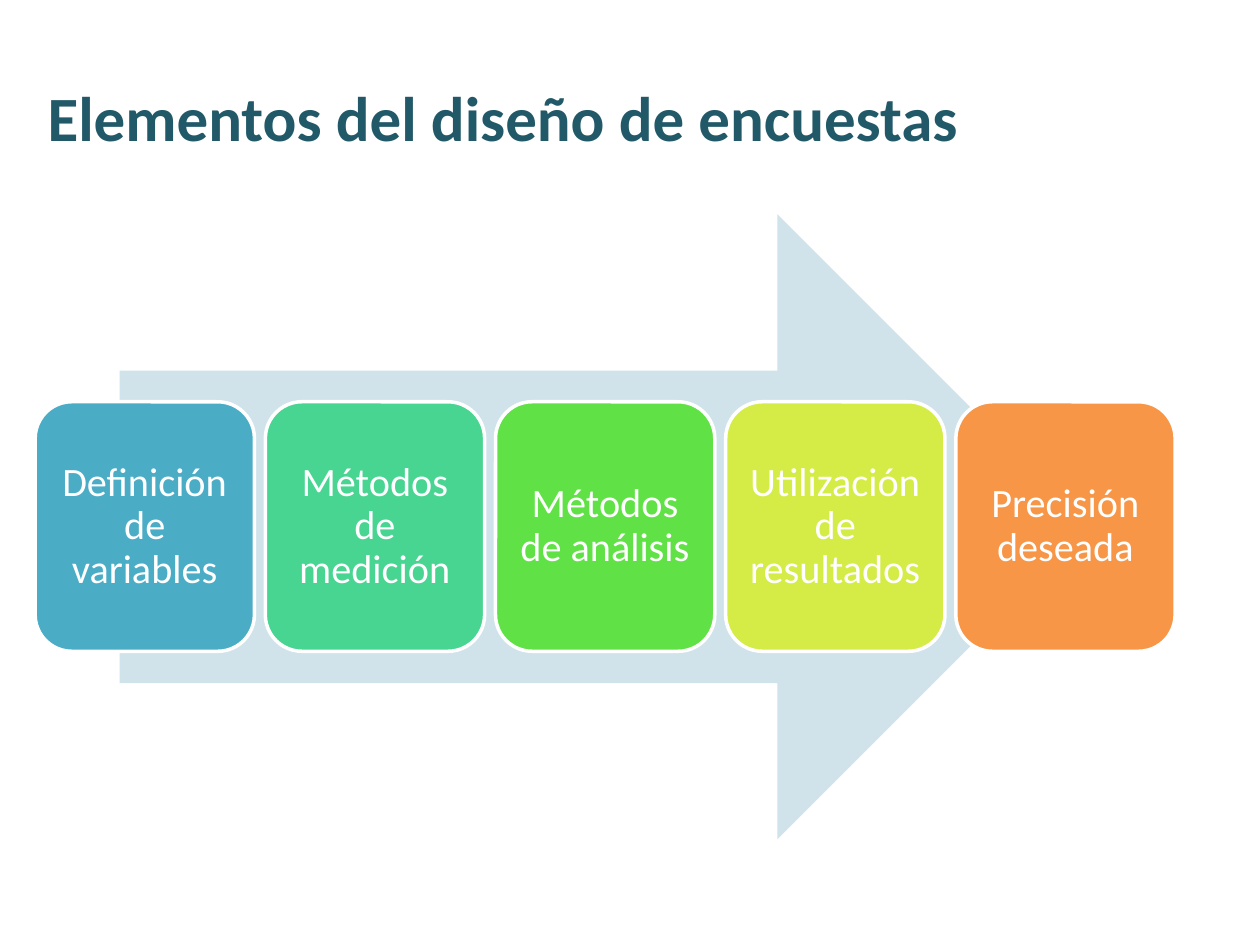
from pptx import Presentation
from pptx.dml.color import RGBColor as RGB
from pptx.enum.shapes import MSO_SHAPE as SHAPE
from pptx.enum.text import MSO_ANCHOR as ANCHOR, PP_ALIGN as ALIGN
from pptx.util import Cm, Pt

COLORS = {
    "title": "215968", "arrow": "D0E3EA", "white": "FFFFFF",
    "blue": "4BACC6", "teal": "48D491", "green": "60E146",
    "lime": "D5EC46", "orange": "F79646",
}
STEPS = [
    ("Definición de variables", "blue"),
    ("Métodos de medición", "teal"),
    ("Métodos de análisis", "green"),
    ("Utilización de resultados", "lime"),
    ("Precisión deseada", "orange"),
]
TITLE_FONT = {"name": "Calibri", "size": Pt(36), "bold": True}
STEP_FONT = {"name": "Calibri", "size": Pt(23), "bold": False}
STEP_FRAME = {side: Cm(0.25) for side in
              ("margin_left", "margin_right", "margin_top", "margin_bottom")}
STEP_LEFT, STEP_PITCH = 0.71, 4.64


def set_all(obj, values):
    for name, value in values.items():
        setattr(obj, name, value)


def write(sp, text, font, color, frame=None, para=None):
    tf = sp.text_frame
    set_all(tf, {"word_wrap": True, "vertical_anchor": ANCHOR.MIDDLE, **(frame or {})})
    p = tf.paragraphs[0]
    set_all(p, para or {})
    r = p.add_run()
    r.text = text
    set_all(r.font, font)
    r.font.color.rgb = RGB.from_string(COLORS[color])


def add_title(s, text):
    sp = s.shapes.add_textbox(Cm(0.71), Cm(0.76), Cm(22.81), Cm(3.18))
    write(sp, text, TITLE_FONT, "title")


def add_filled(s, kind, box, color):
    sp = s.shapes.add_shape(kind, *(Cm(v) for v in box))
    sp.shadow.inherit = False
    sp.fill.solid()
    sp.fill.fore_color.rgb = RGB.from_string(COLORS[color])
    sp.line.fill.background()
    return sp


def add_step(s, index, text, color):
    box = (STEP_LEFT + index * STEP_PITCH, 8.1, 4.42, 5.03)
    sp = add_filled(s, SHAPE.ROUNDED_RECTANGLE, box, color)
    sp.line.color.rgb = RGB.from_string(COLORS["white"])
    sp.line.width = Pt(2)
    write(sp, text, STEP_FONT, "white", STEP_FRAME,
          {"alignment": ALIGN.CENTER, "line_spacing": 0.9})


def main():
    prs = Presentation()
    set_all(prs, {"slide_width": Cm(25.4), "slide_height": Cm(19.05)})
    s = prs.slides.add_slide(prs.slide_layouts[6])

    # Heading
    add_title(s, "Elementos del diseño de encuestas")

    # Arrow behind the steps
    add_filled(s, SHAPE.RIGHT_ARROW, (2.41, 4.32, 19.56, 12.6), "arrow")

    # Row of steps
    for index, (text, color) in enumerate(STEPS):
        add_step(s, index, text, color)

    prs.save("out.pptx")


if __name__ == "__main__":
    main()
